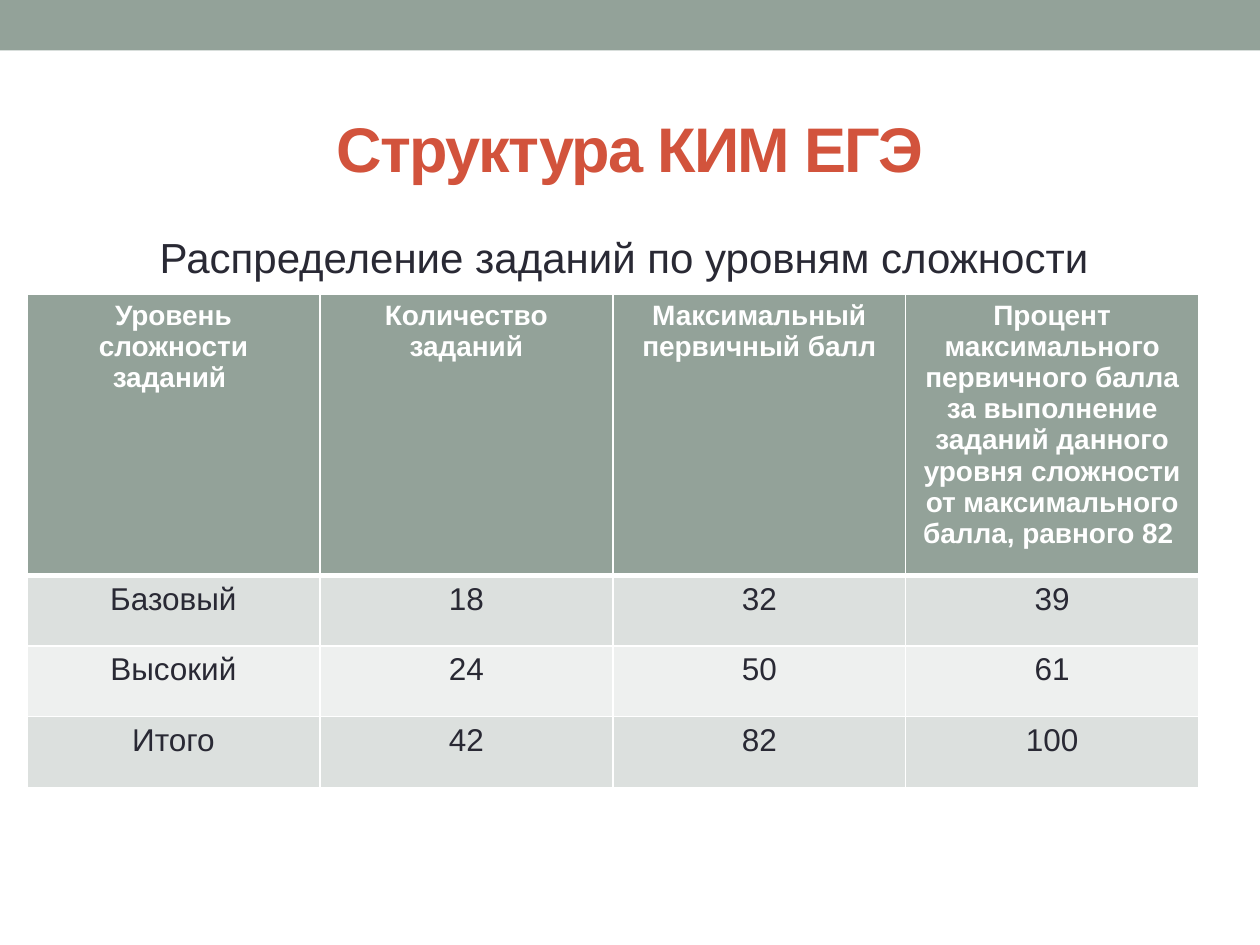
from dataclasses import dataclass

from lxml.etree import SubElement
from pptx import Presentation
from pptx.dml.color import RGBColor as Rgb
from pptx.enum.shapes import MSO_SHAPE as Shape
from pptx.enum.text import MSO_ANCHOR as Anchor
from pptx.enum.text import MSO_AUTO_SIZE as Fit
from pptx.enum.text import PP_ALIGN as Align
from pptx.oxml.ns import qn
from pptx.util import Pt


@dataclass(frozen=True)
class Theme:
    font: str = "Arial"
    sage: str = "93A299"
    red: str = "D2533C"
    dark: str = "292934"
    white: str = "FFFFFF"
    bands: tuple = ("DCE0DE", "EEF0EF")
    title: float = 36
    lead: float = 24
    head: float = 16
    body: float = 18


@dataclass(frozen=True)
class Style:
    size: float
    color: str
    bold: bool = False


@dataclass(frozen=True)
class Box:
    left: float
    top: float
    width: float
    height: float

    def lengths(self) -> tuple:
        return tuple(Pt(n) for n in (self.left, self.top, self.width, self.height))


THEME = Theme()
TITLE = Style(THEME.title, THEME.red, True)
LEAD = Style(THEME.lead, THEME.dark)
HEAD = Style(THEME.head, THEME.white, True)
BODY = Style(THEME.body, THEME.dark)

ROWS = (
    ("Уровень сложности заданий ", "Количество заданий",
     "Максимальный первичный балл",
     "Процент максимального первичного балла за выполнение заданий "
     "данного уровня сложности от максимального балла, равного 82 "),
    ("Базовый", "18", "32", "39"),
    ("Высокий", "24", "50", "61"),
    ("Итого", "42", "82", "100"),
)
HEAD_H, ROW_H = 149.6, 40.4
GRID = Box(15.4, 168, 669.6, HEAD_H + ROW_H * (len(ROWS) - 1))


def write(frame, text: str, style: Style) -> None:
    frame.text = text
    frame.word_wrap = True
    for para in frame.paragraphs:
        para.alignment = Align.CENTER
        for run in para.runs:
            font = run.font
            font.name, font.size, font.bold = THEME.font, Pt(style.size), style.bold
            font.color.rgb = Rgb.from_string(style.color)


def paint(fill, color: str) -> None:
    fill.solid()
    fill.fore_color.rgb = Rgb.from_string(color)


def edge(cell, top: float, base: float) -> None:
    """Draw white cell borders; the top and base widths are in points."""
    props = cell._tc.get_or_add_tcPr()
    widths = {"a:lnL": 1, "a:lnR": 1, "a:lnT": top, "a:lnB": base}
    for spot, (tag, width) in enumerate(widths.items()):
        line = SubElement(props, qn(tag), w=str(Pt(width)))
        fill = SubElement(line, qn("a:solidFill"))
        SubElement(fill, qn("a:srgbClr"), val=THEME.white)
        props.insert(spot, line)


def add_band(slide) -> None:
    band = slide.shapes.add_shape(Shape.RECTANGLE, *Box(0, 0, 720, 28.8).lengths())
    band.shadow.inherit = False
    paint(band.fill, THEME.sage)
    band.line.fill.background()


def set_title(slide, text: str) -> None:
    title = slide.shapes.title
    title.left, title.top, title.width, title.height = Box(36, 42, 648, 78).lengths()
    frame = title.text_frame
    write(frame, text, TITLE)
    frame.auto_size = Fit.NONE
    frame.vertical_anchor = Anchor.MIDDLE
    frame.margin_top = Pt(10)
    for run in frame.paragraphs[0].runs:
        run._r.get_or_add_rPr().set("spc", "-100")


def add_lead(slide, text: str) -> None:
    frame = slide.shapes.add_textbox(*Box(36, 126, 648, 384).lengths()).text_frame
    write(frame, text, LEAD)
    frame.margin_top = Pt(6.4)


def add_grid(slide) -> None:
    table = slide.shapes.add_table(len(ROWS), len(ROWS[0]), *GRID.lengths()).table
    table.first_row = table.horz_banding = False
    for col in table.columns:
        col.width = Pt(GRID.width / len(ROWS[0]))
    for r, texts in enumerate(ROWS):
        table.rows[r].height = Pt(ROW_H if r else HEAD_H)
        for c, text in enumerate(texts):
            cell = table.cell(r, c)
            write(cell.text_frame, text, BODY if r else HEAD)
            paint(cell.fill, THEME.bands[(r - 1) % 2] if r else THEME.sage)
            edge(cell, top=3 if r == 1 else 1, base=1 if r else 3)


def main() -> None:
    deck = Presentation()
    deck.slide_width, deck.slide_height = Pt(720), Pt(540)
    slide = deck.slides.add_slide(deck.slide_layouts.get_by_name("Title Only"))
    paint(slide.background.fill, THEME.white)
    add_band(slide)
    set_title(slide, "Структура КИМ ЕГЭ")
    add_lead(slide, "Распределение заданий по уровням сложности ")
    add_grid(slide)
    deck.save("out.pptx")


if __name__ == "__main__":
    main()
